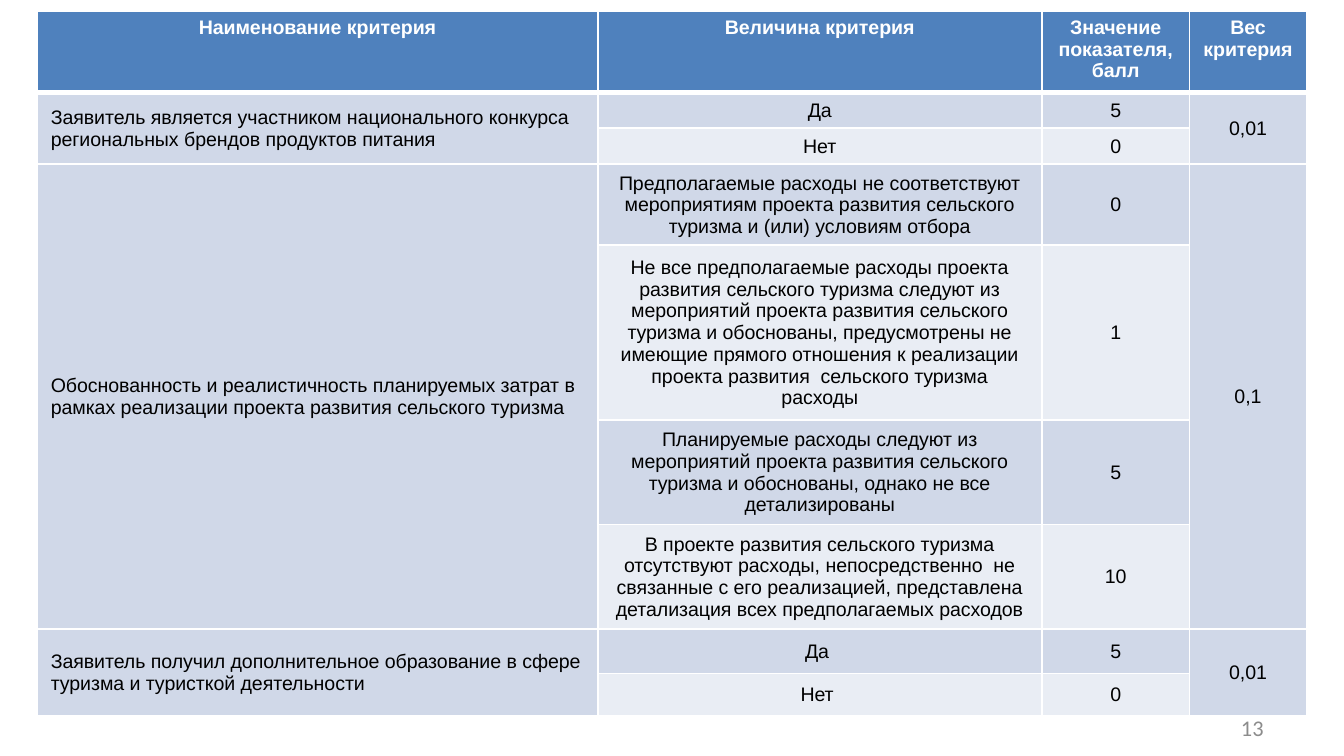
from lxml.etree import SubElement
from pptx import Presentation
from pptx.dml.color import RGBColor
from pptx.enum.text import MSO_ANCHOR as Anchor, PP_ALIGN as Align
from pptx.oxml.ns import qn
from pptx.util import Pt

HEADER_FILL, DARK_BAND, LIGHT_BAND = "4F81BD", "D0D8E8", "E9EDF4"
WHITE, BLACK, GREY = "FFFFFF", "000000", "8C8C8C"

HEADERS = ["Наименование критерия", "Величина критерия",
           "Значение показателя, балл", "Вес критерия"]
COLUMN_WIDTHS = [300.3, 237.8, 79.2, 62.6]
ROW_HEIGHTS = [42.9, 19.3, 19.3, 43.4, 92.5, 55.9, 55.9, 24, 22.8]

# Each criterion: name, weight, and its (value, score) options
CRITERIA = [
    ("Заявитель является участником национального конкурса региональных "
     "брендов продуктов питания", "0,01",
     [("Да", "5"), ("Нет", "0")]),
    ("Обоснованность и реалистичность планируемых затрат в рамках "
     "реализации проекта развития сельского туризма", "0,1",
     [("Предполагаемые расходы не соответствуют мероприятиям проекта "
       "развития сельского туризма и (или) условиям отбора", "0"),
      ("Не все предполагаемые расходы проекта развития сельского туризма "
       "следуют из мероприятий проекта развития сельского туризма и "
       "обоснованы, предусмотрены не имеющие прямого отношения к реализации "
       "проекта развития  сельского туризма расходы", "1"),
      ("Планируемые расходы следуют из мероприятий проекта развития "
       "сельского туризма и обоснованы, однако не все детализированы", "5"),
      ("В проекте развития сельского туризма отсутствуют расходы, "
       "непосредственно  не связанные с его реализацией, представлена "
       "детализация всех предполагаемых расходов", "10")]),
    ("Заявитель получил дополнительное образование в сфере туризма и "
     "туристкой деятельности", "0,01",
     [("Да ", "5"), ("Нет ", "0")]),
]


def color(value):
    return RGBColor.from_string(value)


def set_all(target, values):
    for name, value in values.items():
        setattr(target, name, value)


def write(frame, text, ink, align, font):
    para = frame.paragraphs[0]
    para.alignment = align
    span = para.add_run()
    span.text = text
    set_all(span.font, font)
    span.font.color.rgb = color(ink)


def add_borders(cell, bottom):
    properties = cell._tc.get_or_add_tcPr()
    widths = {"lnL": 1, "lnR": 1, "lnT": 1, "lnB": bottom}
    for index, (side, width) in enumerate(widths.items()):
        line = SubElement(properties, qn(f"a:{side}"), w=str(Pt(width)))
        fill = SubElement(line, qn("a:solidFill"))
        SubElement(fill, qn("a:srgbClr"), val=WHITE)
        # Borders must come before the cell fill
        properties.insert(index, line)


def style_cell(cell, row, column):
    header = row == 0
    light = column in (1, 2) and row % 2 == 0
    cell.fill.solid()
    cell.fill.fore_color.rgb = color(
        HEADER_FILL if header else LIGHT_BAND if light else DARK_BAND)
    set_all(cell, {
        "margin_left": Pt(7.2), "margin_right": Pt(7.2),
        "margin_top": Pt(3), "margin_bottom": Pt(2.6),
        "vertical_anchor": Anchor.TOP if header else Anchor.MIDDLE})
    add_borders(cell, 3 if header else 1)


def fill_cell(table, row, column, text):
    header = row == 0
    align = Align.LEFT if column == 0 and not header else Align.CENTER
    write(table.cell(row, column).text_frame, text,
          WHITE if header else BLACK, align,
          {"name": "Arial", "size": Pt(10.5), "bold": header})


def add_criteria_table(page, left, top):
    table = page.shapes.add_table(
        len(ROW_HEIGHTS), len(COLUMN_WIDTHS), Pt(left), Pt(top),
        Pt(sum(COLUMN_WIDTHS)), Pt(sum(ROW_HEIGHTS))).table
    for column, width in zip(table.columns, COLUMN_WIDTHS):
        column.width = Pt(width)
    for row, height in zip(table.rows, ROW_HEIGHTS):
        row.height = Pt(height)
    for row in range(len(ROW_HEIGHTS)):
        for column in range(len(COLUMN_WIDTHS)):
            style_cell(table.cell(row, column), row, column)

    # Header row
    for column, title in enumerate(HEADERS):
        fill_cell(table, 0, column, title)

    # Criteria: name and weight span all of the options
    first = 1
    for name, weight, options in CRITERIA:
        last = first + len(options) - 1
        for column, text in ((0, name), (3, weight)):
            table.cell(first, column).merge(table.cell(last, column))
            fill_cell(table, first, column, text)
        for row, option in enumerate(options, first):
            for column, text in enumerate(option, 1):
                fill_cell(table, row, column, text)
        first = last + 1


def add_page_number(page, left, top, width, height):
    box = page.shapes.add_textbox(Pt(left), Pt(top), Pt(width), Pt(height))
    set_all(box.text_frame, {"word_wrap": True,
                             "vertical_anchor": Anchor.MIDDLE})
    write(box.text_frame, "13", GREY, Align.RIGHT,
          {"name": "Calibri", "size": Pt(12)})


def main():
    deck = Presentation()
    set_all(deck, {"slide_width": Pt(720), "slide_height": Pt(405)})
    page = deck.slides.add_slide(deck.slide_layouts[6])
    # The number sits just below the table, clear of its last row
    add_page_number(page, 516, 379, 168, 21.6)
    add_criteria_table(page, 20, 6)
    deck.save("out.pptx")


if __name__ == "__main__":
    main()
